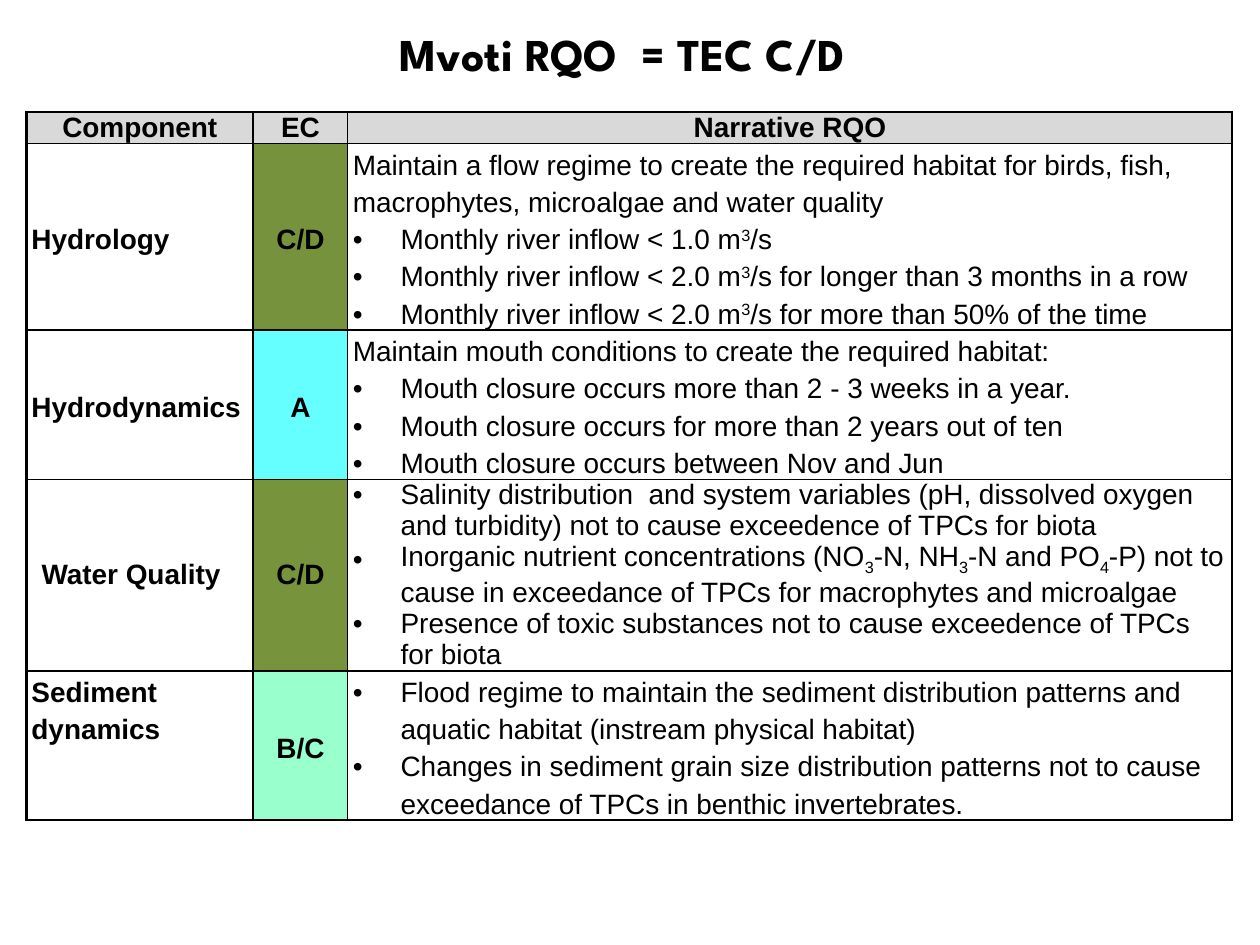
"""Build the Mvoti RQO slide with its table of components and narrative objectives."""
from dataclasses import dataclass
from typing import NamedTuple, Optional

from lxml import etree
from pptx import Presentation
from pptx.dml.color import RGBColor
from pptx.enum.text import MSO_ANCHOR, PP_ALIGN
from pptx.oxml.ns import qn
from pptx.util import Inches, Pt

CENTER, LEFT = PP_ALIGN.CENTER, PP_ALIGN.LEFT
TOP, MIDDLE = MSO_ANCHOR.TOP, MSO_ANCHOR.MIDDLE
BLACK = RGBColor(0x00, 0x00, 0x00)
WHITE = RGBColor(0xFF, 0xFF, 0xFF)
GREY = RGBColor(0xD9, 0xD9, 0xD9)
OLIVE = RGBColor(0x76, 0x92, 0x3C)
OLIVE_LIGHT = RGBColor(0x77, 0x93, 0x3C)
CYAN = RGBColor(0x66, 0xFF, 0xFF)
MINT = RGBColor(0x99, 0xFF, 0xCC)
FONT, TITLE_FONT = "Arial", "League Spartan"
THIN, THICK = 1, 1.5
SUPER, SUB = 30, -25
HEADERS = ("Component", "EC", "Narrative RQO")
COL_WIDTHS = (1.8, 0.75, 7.02)
HEADER_HEIGHT = 0.25


class Span(NamedTuple):
    text: str
    baseline: int = 0


class Para(NamedTuple):
    spans: tuple[Span, ...]
    bullet: bool = False
    bold: bool = False
    align: PP_ALIGN = LEFT
    indent: float = 0


@dataclass
class Component:
    name: str
    ec: str
    color: RGBColor
    height: float
    narrative: tuple[Para, ...]
    spacing: Optional[float] = 1.2
    anchor: MSO_ANCHOR = MIDDLE
    indent: float = 0


def plain(text: str) -> Para:
    return Para((Span(text),))


def bullet(*spans: Span) -> Para:
    return Para(spans, bullet=True)


def inflow(limit: str, ending: str) -> Para:
    return bullet(Span(f"Monthly river inflow < {limit} m"), Span("3", SUPER), Span(ending))


COMPONENTS = (
    Component("Hydrology", "C/D", OLIVE, 1.48, (
        plain("Maintain a flow regime to create the required habitat for birds, fish, "
              "macrophytes, microalgae and water quality"),
        inflow("1.0", "/s"),
        inflow("2.0", "/s for longer than 3 months in a row"),
        inflow("2.0", "/s for more than 50% of the time"),
    )),
    Component("Hydrodynamics", "A", CYAN, 1.18, (
        plain("Maintain mouth conditions to create the required habitat:"),
        bullet(Span("Mouth closure occurs more than 2 - 3 weeks in a year.")),
        bullet(Span("Mouth closure occurs for more than 2 years out of ten")),
        bullet(Span("Mouth closure occurs between Nov and Jun")),
    )),
    Component("Water Quality", "C/D", OLIVE_LIGHT, 1.52, (
        bullet(Span("Salinity distribution  and system variables (pH, dissolved oxygen "
                    "and turbidity) not to cause exceedence of TPCs for biota")),
        bullet(Span("Inorganic nutrient concentrations (NO"), Span("3", SUB),
               Span("-N, NH"), Span("3", SUB), Span("-N and PO"), Span("4", SUB),
               Span("-P) not to cause in exceedance of TPCs for macrophytes and microalgae")),
        bullet(Span("Presence of toxic substances not to cause exceedence of TPCs for biota")),
    ), spacing=None, indent=0.08),
    Component("Sediment dynamics", "B/C", MINT, 1.18, (
        bullet(Span("Flood regime to maintain the sediment distribution patterns and "
                    "aquatic habitat (instream physical habitat)")),
        bullet(Span("Changes in sediment grain size distribution patterns not to cause "
                    "exceedance of TPCs in benthic invertebrates.")),
    ), anchor=TOP),
)


def set_indent(p, para: Para) -> None:
    pPr = p._p.get_or_add_pPr()
    if para.bullet:
        pPr.set("marL", str(Inches(0.38)))
        pPr.set("indent", str(Inches(-0.38)))
        etree.SubElement(pPr, qn("a:buFont"), typeface=FONT)
        etree.SubElement(pPr, qn("a:buChar"), char="•")
    elif para.indent:
        pPr.set("marL", str(Inches(para.indent)))


def add_run(p, span: Span, font: str, size: float, bold: bool) -> None:
    r = p.add_run()
    r.text = span.text
    r.font.name, r.font.size, r.font.bold = font, Pt(size), bold
    r.font.color.rgb = BLACK
    if span.baseline:
        r._r.get_or_add_rPr().set("baseline", str(span.baseline * 1000))


def set_borders(cell, left: float, right: float, top: float, bottom: float) -> None:
    tcPr = cell._tc.get_or_add_tcPr()
    for side, width in (("L", left), ("R", right), ("T", top), ("B", bottom)):
        ln = etree.SubElement(tcPr, qn(f"a:ln{side}"), w=str(Pt(width)))
        fill = etree.SubElement(ln, qn("a:solidFill"))
        etree.SubElement(fill, qn("a:srgbClr"), val=str(BLACK))


def fill_cell(table, row: int, col: int, paras: tuple[Para, ...], color: RGBColor,
              anchor: MSO_ANCHOR, spacing: Optional[float] = None) -> None:
    cell = table.cell(row, col)
    cell.margin_left = cell.margin_right = Inches(0.04)
    cell.margin_top = cell.margin_bottom = 0
    cell.vertical_anchor = anchor
    set_borders(cell, THICK if col == 0 else THIN,
                THICK if col == len(HEADERS) - 1 else THIN,
                THICK if row == 0 else THIN, THIN)
    cell.fill.solid()
    cell.fill.fore_color.rgb = color
    tf = cell.text_frame
    for i, para in enumerate(paras):
        p = tf.add_paragraph() if i else tf.paragraphs[0]
        set_indent(p, para)
        p.alignment = para.align
        if spacing:
            p.line_spacing = spacing
        for span in para.spans:
            add_run(p, span, FONT, 16, para.bold)


def add_title(slide, text: str) -> None:
    sp = slide.shapes.title
    sp.left, sp.top, sp.width, sp.height = map(Inches, (0.3, 0.14, 9.38, 0.81))
    tf = sp.text_frame
    tf.word_wrap = True
    tf.vertical_anchor = TOP
    tf.margin_top = Inches(0.07)
    p = tf.paragraphs[0]
    p.alignment = CENTER
    add_run(p, Span(text), TITLE_FONT, 26, True)


def add_component_table(slide) -> None:
    heights = (HEADER_HEIGHT, *(c.height for c in COMPONENTS))
    table = slide.shapes.add_table(
        len(heights), len(HEADERS), Inches(0.21), Inches(0.89),
        Inches(sum(COL_WIDTHS)), Inches(sum(heights))).table
    table.first_row = table.horz_banding = False
    for column, width in zip(table.columns, COL_WIDTHS):
        column.width = Inches(width)
    for row, height in zip(table.rows, heights):
        row.height = Inches(height)
    for col, text in enumerate(HEADERS):
        header = Para((Span(text),), bold=True, align=CENTER)
        fill_cell(table, 0, col, (header,), GREY, MIDDLE)
    for row, c in enumerate(COMPONENTS, start=1):
        name = Para((Span(c.name),), bold=True, indent=c.indent)
        ec = Para((Span(c.ec),), bold=True, align=CENTER)
        fill_cell(table, row, 0, (name,), WHITE, c.anchor, c.spacing)
        fill_cell(table, row, 1, (ec,), c.color, MIDDLE, c.spacing)
        fill_cell(table, row, 2, c.narrative, WHITE, TOP, c.spacing)


def main() -> None:
    prs = Presentation()
    prs.slide_width, prs.slide_height = Inches(10), Inches(7.5)
    slide = prs.slides.add_slide(prs.slide_layouts[5])
    add_component_table(slide)
    add_title(slide, "Mvoti RQO  = TEC C/D ")
    prs.save("out.pptx")


if __name__ == "__main__":
    main()
